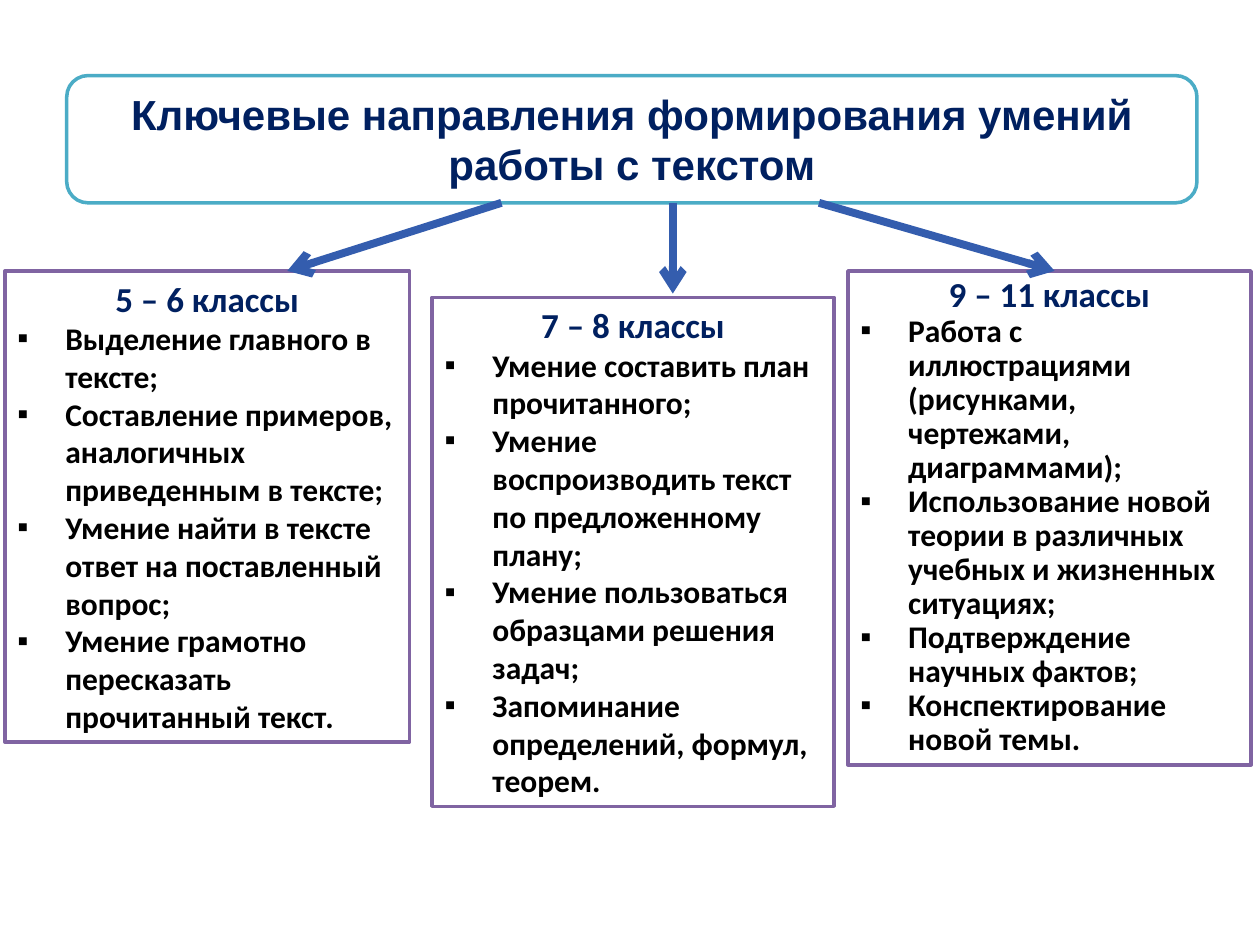
from dataclasses import dataclass

from lxml import etree
from pptx import Presentation
from pptx.dml.color import RGBColor
from pptx.enum.shapes import MSO_CONNECTOR, MSO_SHAPE
from pptx.enum.text import MSO_ANCHOR, MSO_AUTO_SIZE, PP_ALIGN
from pptx.oxml.ns import qn
from pptx.util import Inches, Pt

RECT = MSO_SHAPE.RECTANGLE
ROUNDED = MSO_SHAPE.ROUNDED_RECTANGLE
STRAIGHT = MSO_CONNECTOR.STRAIGHT
TOP = MSO_ANCHOR.TOP
GROW = MSO_AUTO_SIZE.SHAPE_TO_FIT_TEXT
LEFT, CENTER = PP_ALIGN.LEFT, PP_ALIGN.CENTER

WHITE, BLACK, NAVY = "FFFFFF", "000000", "002060"
TEAL, PURPLE, BLUE = "4BACC6", "8064A2", "345DAE"
TITLE = "Ключевые направления формирования умений работы с текстом"
TITLE_BOTTOM = 1.61
INDENT = 0.38


@dataclass
class Stage:
    """A group of school years, its skills and the arrow leading to it."""
    left: float
    top: float
    width: float
    height: float
    heading: str
    skills: list[str]
    arrow_start: float
    arrow_end: tuple[float, float]
    spacing: float = 1.0


STAGES = [
    Stage(0.04, 2.15, 3.21, 3.74, "5 – 6 классы", [
        "Выделение главного в тексте;",
        "Составление примеров, аналогичных приведенным в тексте;",
        "Умение найти в тексте ответ на поставленный вопрос;",
        "Умение грамотно пересказать прочитанный текст.",
    ], 3.98, (2.28, 2.15)),
    Stage(3.43, 2.36, 3.19, 4.04, "7 – 8 классы", [
        "Умение составить план прочитанного;",
        "Умение воспроизводить текст по предложенному плану;",
        "Умение пользоваться образцами решения задач;",
        "Запоминание определений, формул, теорем.",
    ], 5.34, (5.34, 2.33)),
    Stage(6.73, 2.15, 3.2, 3.92, "9 – 11 классы", [
        "Работа с иллюстрациями (рисунками, чертежами, диаграммами);",
        "Использование новой теории в различных учебных и жизненных ситуациях;",
        "Подтверждение научных фактов;",
        "Конспектирование новой темы.",
    ], 6.5, (8.37, 2.15), 0.9),
]


def rgb(value: str) -> RGBColor:
    """Turn a hex string into a colour."""
    return RGBColor.from_string(value)


def add_box(s, kind, left: float, top: float, width: float, height: float, line: str):
    """Draw a white outlined box and return its text frame."""
    sp = s.shapes.add_shape(kind, Inches(left), Inches(top), Inches(width), Inches(height))
    sp.shadow.inherit = False
    sp.fill.solid()
    sp.fill.fore_color.rgb = rgb(WHITE)
    sp.line.color.rgb = rgb(line)
    sp.line.width = Pt(2)
    tf = sp.text_frame
    tf.word_wrap = True
    tf.auto_size = GROW
    tf.vertical_anchor = TOP
    return tf


def style(p, font: str, size: float, color: str, align=CENTER) -> None:
    """Align a paragraph and format its runs in bold."""
    p.alignment = align
    for r in p.runs:
        r.font.name = font
        r.font.size = Pt(size)
        r.font.bold = True
        r.font.color.rgb = rgb(color)


def add_bullet(p) -> None:
    """Give a paragraph a square bullet with a hanging indent."""
    pPr = p._p.get_or_add_pPr()
    pPr.set("marL", str(Inches(INDENT)))
    pPr.set("indent", str(-Inches(INDENT)))
    etree.SubElement(pPr, qn("a:buFont"), typeface="Arial")
    etree.SubElement(pPr, qn("a:buChar"), char="▪")


def add_stage(s, stage: Stage) -> None:
    """Draw the box of one stage with its heading and skills."""
    tf = add_box(s, RECT, stage.left, stage.top, stage.width, stage.height, PURPLE)
    tf.text = "\n".join([stage.heading, *stage.skills])
    heading, *skills = tf.paragraphs
    for p in tf.paragraphs:
        p.line_spacing = stage.spacing
    style(heading, "Calibri", 20, NAVY)
    for p in skills:
        add_bullet(p)
        style(p, "Calibri", 18, BLACK, LEFT)


def add_arrow(s, stage: Stage) -> None:
    """Draw the arrow from the title to one stage."""
    x, y = stage.arrow_end
    line = s.shapes.add_connector(
        STRAIGHT, Inches(stage.arrow_start), Inches(TITLE_BOTTOM), Inches(x), Inches(y))
    line.line.color.rgb = rgb(BLUE)
    line.line.width = Pt(4.5)
    etree.SubElement(line.line._get_or_add_ln(), qn("a:tailEnd"), type="arrow")
    etree.SubElement(line._element.spPr, qn("a:effectLst"))


def main() -> None:
    """Build the slide and save it."""
    prs = Presentation()
    prs.slide_width, prs.slide_height = Inches(10), Inches(7.5)
    s = prs.slides.add_slide(prs.slide_layouts[6])
    tf = add_box(s, ROUNDED, 0.53, 0.6, 8.97, 1.01, TEAL)
    tf.text = TITLE
    style(tf.paragraphs[0], "Arial", 24, NAVY)
    for stage in STAGES:
        add_stage(s, stage)
    for stage in STAGES:
        add_arrow(s, stage)
    prs.save("out.pptx")


if __name__ == "__main__":
    main()
